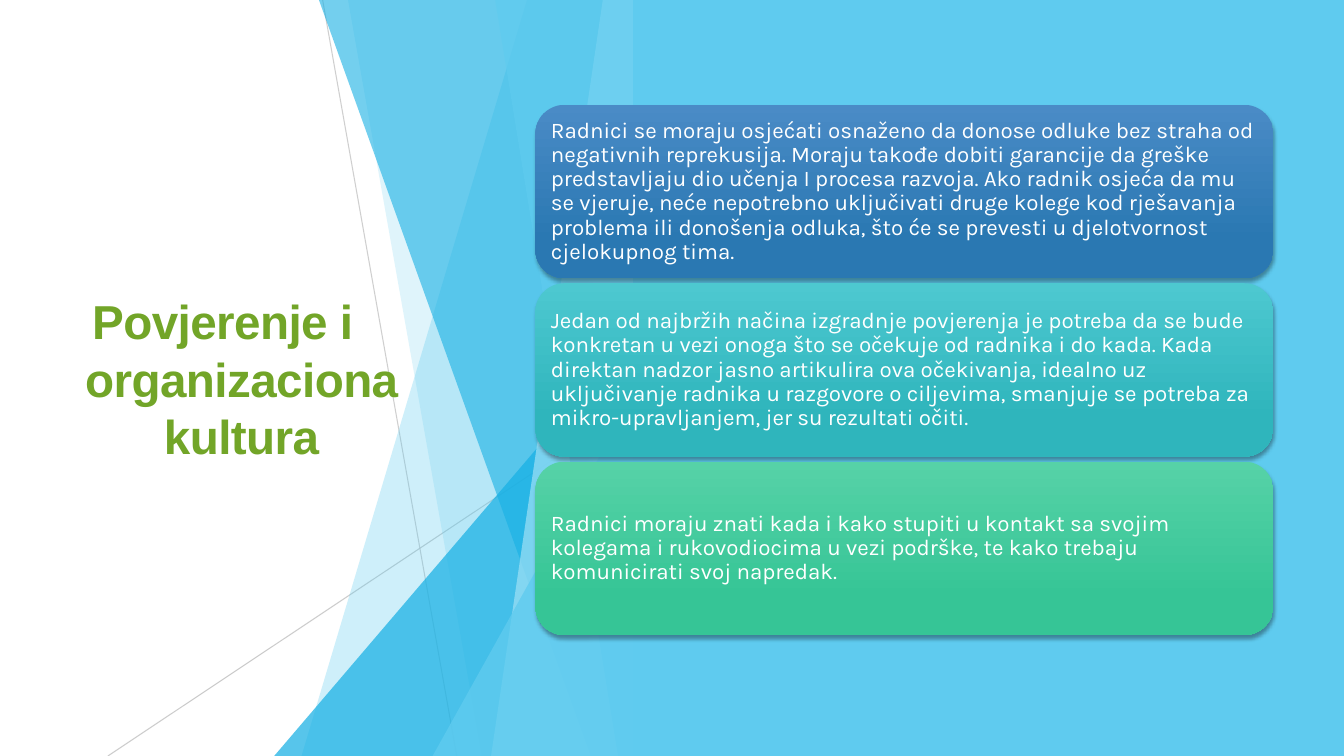
from lxml.etree import SubElement
from pptx import Presentation
from pptx.dml.color import RGBColor
from pptx.enum.shapes import MSO_CONNECTOR, MSO_SHAPE
from pptx.enum.text import MSO_ANCHOR, MSO_AUTO_SIZE, PP_ALIGN
from pptx.oxml.ns import qn
from pptx.util import Inches, Pt

PANEL_LEFT = 6.28
SLIDE_WIDTH, SLIDE_HEIGHT = 13.33, 7.5

CARDS = [
    ("4A8BC6", "2A78B2",
     "Radnici se moraju osjećati osnaženo da donose odluke bez straha od negativnih "
     "reprekusija. Moraju takođe dobiti garancije da greške predstavljaju dio učenja I "
     "procesa razvoja. Ako radnik osjeća da mu se vjeruje, neće nepotrebno uključivati "
     "druge kolege kod rješavanja problema ili donošenja odluka, što će se prevesti u "
     "djelotvornost cjelokupnog tima."),
    ("4DC8D0", "2FB5BC",
     "Jedan od najbržih načina izgradnje povjerenja je potreba da se bude konkretan u "
     "vezi onoga što se očekuje od radnika i do kada. Kada direktan nadzor jasno "
     "artikulira ova očekivanja, idealno uz uključivanje radnika u razgovore o "
     "ciljevima, smanjuje se potreba za mikro-upravljanjem, jer su rezultati očiti."),
    ("56D2A7", "36C596",
     "Radnici moraju znati kada i kako stupiti u kontakt sa svojim kolegama i "
     "rukovodiocima u vezi podrške, te kako trebaju komunicirati svoj napredak."),
]


def rgb(color):
    return RGBColor.from_string(color)


def set_opacity(shape, percent):
    color = shape._element.spPr.find(".//" + qn("a:srgbClr"))
    SubElement(color, qn("a:alpha"), val=str(percent * 1000))


def paint(shape, color, opacity=100):
    shape.shadow.inherit = False
    shape.fill.solid()
    shape.fill.fore_color.rgb = rgb(color)
    shape.line.fill.background()
    if opacity < 100:
        set_opacity(shape, opacity)


def add_ray(slide, start, end, opacity):
    ray = slide.shapes.add_connector(
        MSO_CONNECTOR.STRAIGHT, *(Inches(value) for value in start + end))
    ray.line.color.rgb = rgb("BFBFBF")
    ray.line.width = Pt(0.75)
    set_opacity(ray, opacity)
    SubElement(ray._element.spPr, qn("a:effectLst"))


def add_facet(slide, top_left, bottom_left, color, opacity):
    """Slanted full-height band that ends at the blue panel."""
    top = Inches(-0.01)
    right, bottom = Inches(PANEL_LEFT), Inches(SLIDE_HEIGHT)
    outline = slide.shapes.build_freeform(Inches(top_left), top)
    outline.add_line_segments(
        [(right, top), (right, bottom), (Inches(bottom_left), bottom)])
    paint(outline.convert_to_shape(), color, opacity)


def add_corner(slide, left, top, color, opacity):
    """Right triangle that stands on the slide's bottom beside the panel."""
    corner = slide.shapes.add_shape(
        MSO_SHAPE.ISOSCELES_TRIANGLE, Inches(left), Inches(top),
        Inches(PANEL_LEFT - left), Inches(SLIDE_HEIGHT - top))
    corner.adjustments[0] = 1
    paint(corner, color, opacity)


def add_facets(slide):
    add_ray(slide, (3.2, 0), (4.53, 7.5), 75)
    add_ray(slide, (6.28, 4.03), (1.07, 7.5), 80)
    add_facet(slide, 5.23, 2.99, "5FCBEF", 30)
    add_facet(slide, 3.45, 4.78, "5FCBEF", 20)
    add_corner(slide, 2.72, 3.33, "17B0E4", 72)
    add_facet(slide, 3.16, 5.86, "17B0E4", 60)
    add_facet(slide, 5.98, 4.87, "9FE0F5", 70)
    add_facet(slide, 4.91, 6.13, "5FCBEF", 65)
    add_corner(slide, 4.29, 3.93, "5FCBEF", 80)


def place_title(slide, text):
    title = slide.shapes.title
    title.left, title.top = Inches(0.33), Inches(1.51)
    title.width, title.height = Inches(3.75), Inches(4.48)
    frame = title.text_frame
    frame.text = text
    frame.word_wrap = True
    frame.auto_size = MSO_AUTO_SIZE.NONE
    frame.vertical_anchor = MSO_ANCHOR.MIDDLE
    paragraph = frame.paragraphs[0]
    paragraph.alignment = PP_ALIGN.CENTER
    paragraph.space_before = Pt(7)
    properties = paragraph._p.get_or_add_pPr()
    properties.set("marL", str(Inches(0.38)))
    properties.set("indent", str(Inches(-0.38)))
    run = paragraph.runs[0]
    run.font.name, run.font.size, run.font.bold = "Arial", Pt(34), True
    run.font.color.rgb = rgb("72A528")
    run._r.get_or_add_rPr().set("spc", "-40")
    # The title stands in front of the facets
    slide.shapes._spTree.append(title._element)


def add_panel(slide):
    panel = slide.shapes.add_shape(
        MSO_SHAPE.RECTANGLE, Inches(PANEL_LEFT), 0,
        Inches(SLIDE_WIDTH - PANEL_LEFT), Inches(SLIDE_HEIGHT))
    paint(panel, "5FCBEF")


def add_drop_shadow(shape):
    shape.shadow.inherit = False
    effects = shape._element.spPr.find(qn("a:effectLst"))
    shadow = SubElement(effects, qn("a:outerShdw"), blurRad=str(Pt(3)),
                        dist=str(Pt(2)), dir="5400000", rotWithShape="0")
    color = SubElement(shadow, qn("a:srgbClr"), val="000000")
    SubElement(color, qn("a:alpha"), val="35000")


def add_card(slide, top, upper_color, lower_color, text):
    card = slide.shapes.add_shape(
        MSO_SHAPE.ROUNDED_RECTANGLE, Inches(5.31), Inches(top),
        Inches(7.32), Inches(1.72))
    card.line.fill.background()
    card.fill.gradient()
    card.fill.gradient_angle = 270
    stops = zip(card.fill.gradient_stops, (0, 0.78), (upper_color, lower_color))
    for stop, position, color in stops:
        stop.position = position
        stop.color.rgb = rgb(color)
    add_drop_shadow(card)

    frame = card.text_frame
    frame.text = text
    frame.word_wrap = True
    frame.vertical_anchor = MSO_ANCHOR.MIDDLE
    frame.margin_left = frame.margin_right = Inches(0.07)
    frame.margin_top = frame.margin_bottom = Inches(0.07)
    paragraph = frame.paragraphs[0]
    paragraph.alignment = PP_ALIGN.LEFT
    paragraph.line_spacing = 0.9
    font = paragraph.runs[0].font
    font.name, font.size = "Karla", Pt(16)
    font.color.rgb = rgb("FFFFFF")


def main():
    presentation = Presentation()
    presentation.slide_width = Inches(SLIDE_WIDTH)
    presentation.slide_height = Inches(SLIDE_HEIGHT)
    slide = presentation.slides.add_slide(presentation.slide_layouts[5])

    add_facets(slide)
    place_title(slide, "Povjerenje i organizaciona kultura")
    add_panel(slide)
    for row, (upper_color, lower_color, text) in enumerate(CARDS):
        add_card(slide, 1.04 + row * 1.77, upper_color, lower_color, text)

    presentation.save("out.pptx")


if __name__ == "__main__":
    main()
